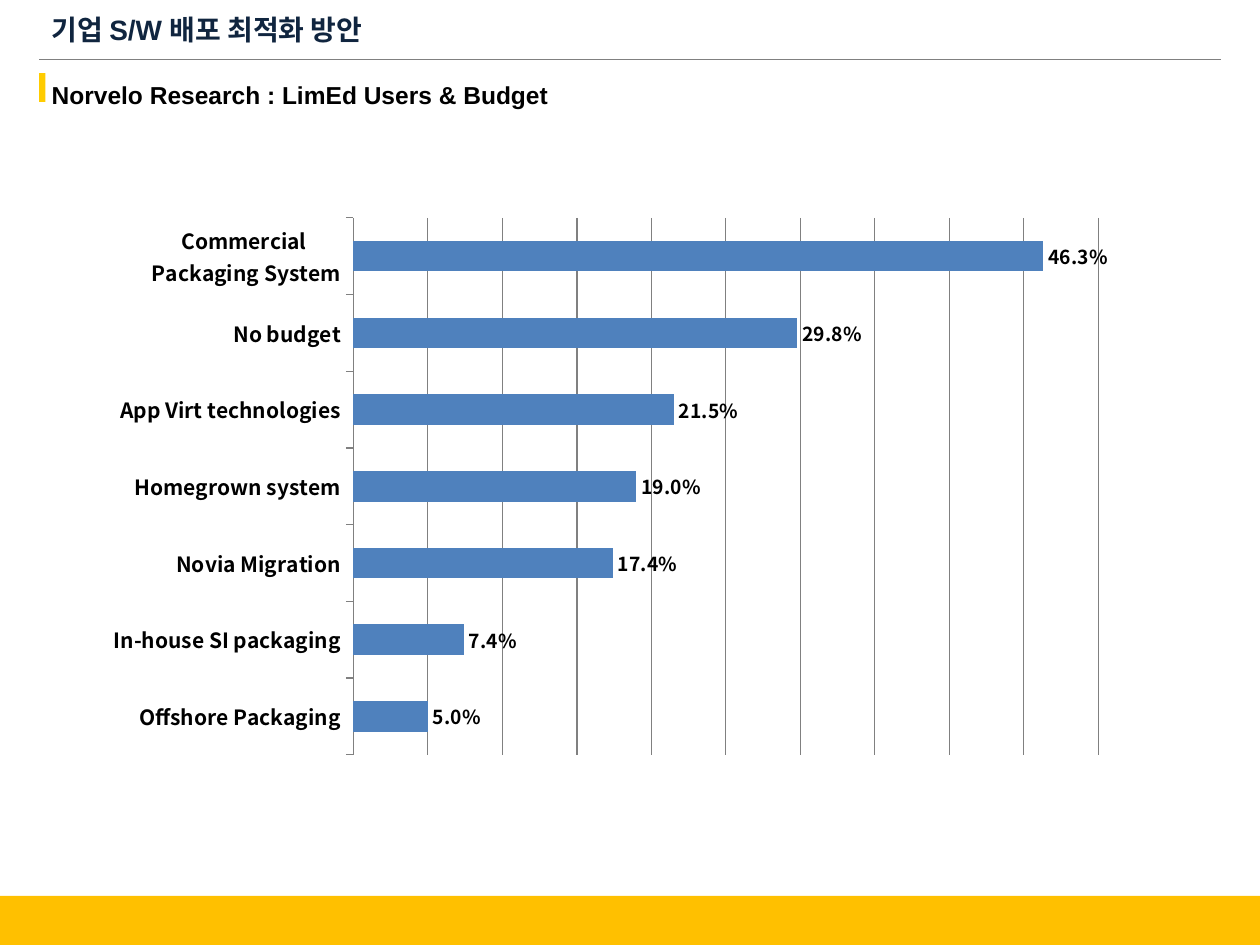
from dataclasses import dataclass

from lxml import etree
from pptx import Presentation
from pptx import util as u
from pptx.chart.data import CategoryChartData
from pptx.dml.color import RGBColor
from pptx.enum import chart as ch
from pptx.enum import shapes, text
from pptx.oxml import parse_xml
from pptx.oxml.ns import nsdecls, qn


@dataclass(frozen=True)
class Theme:
    font: str = "Arial"
    chart_font: str = "Noto Sans CJK KR"
    title_color: str = "10253F"
    text_color: str = "000000"
    rule_color: str = "808080"
    footer_color: str = "FFC000"
    accent_color: str = "FFCC00"
    bar_color: str = "4F81BD"
    title_size: int = 16
    body_size: int = 14
    category_size: int = 12
    label_size: int = 11


@dataclass(frozen=True)
class Band:
    left: float
    top: float
    width: float
    height: float
    color: str


THEME = Theme()
BANDS = [
    Band(0, 7.11, 10, 0.39, THEME.footer_color),
    Band(0.31, 0.58, 0.05, 0.23, THEME.accent_color),
]
BUDGET_SHARES = {
    "Offshore Packaging": 0.05,
    "In-house SI packaging": 0.074,
    "Novia Migration": 0.174,
    "Homegrown system": 0.19,
    "App Virt technologies": 0.215,
    "No budget": 0.298,
    "Commercial \nPackaging System": 0.463,
}


def style_font(font, size: int, color: str, name: str) -> None:
    font.size = u.Pt(size)
    font.bold = True
    font.name = name
    font.color.rgb = RGBColor.from_string(color)


def place(shape, left: float, top: float, width: float, height: float) -> None:
    shape.left, shape.top = u.Inches(left), u.Inches(top)
    shape.width, shape.height = u.Inches(width), u.Inches(height)


def draw_band(slide, band: Band) -> None:
    shape = slide.shapes.add_shape(
        shapes.MSO_SHAPE.RECTANGLE, u.Inches(band.left), u.Inches(band.top),
        u.Inches(band.width), u.Inches(band.height))
    shape.shadow.inherit = False
    shape.fill.solid()
    shape.fill.fore_color.rgb = RGBColor.from_string(band.color)
    shape.line.fill.background()


def draw_rule(slide) -> None:
    rule = slide.shapes.add_connector(
        shapes.MSO_CONNECTOR.STRAIGHT, u.Inches(0.31), u.Inches(0.47),
        u.Inches(9.69), u.Inches(0.47))
    rule.line.color.rgb = RGBColor.from_string(THEME.rule_color)
    rule.line.width = u.Pt(0.75)
    etree.SubElement(rule._element.spPr, qn("a:effectLst"))


def write_title(slide) -> None:
    title = slide.shapes.title
    place(title, 0.31, 0.08, 8.48, 0.31)
    title.text_frame.vertical_anchor = text.MSO_ANCHOR.MIDDLE
    title.text_frame.text = "기업 S/W 배포 최적화 방안"
    paragraph = title.text_frame.paragraphs[0]
    paragraph.alignment = text.PP_ALIGN.LEFT
    style_font(paragraph.font, THEME.title_size, THEME.title_color, THEME.font)


def write_body(slide) -> None:
    body = slide.placeholders[1]
    place(body, 0.31, 0.47, 9.38, 6.58)
    body.text_frame.text = "Norvelo Research : LimEd Users & Budget"
    paragraph = body.text_frame.paragraphs[0]
    paragraph.line_spacing = 1.5
    paragraph.space_before = u.Pt(0)
    properties = paragraph._p.get_or_add_pPr()
    properties.set("marL", str(u.Inches(0.5)))
    properties.set("indent", str(u.Inches(-0.5)))
    etree.SubElement(properties, qn("a:buNone"))
    style_font(paragraph.font, THEME.body_size, THEME.text_color, THEME.font)


def fix_plot_area(chart, x: float, y: float, width: float, height: float) -> None:
    """Set the inner plot area as fractions of the chart's size."""
    plot_area = chart._chartSpace.chart.plotArea
    for layout in plot_area.findall(qn("c:layout")):
        plot_area.remove(layout)
    plot_area.insert(0, parse_xml(
        f'<c:layout {nsdecls("c")}><c:manualLayout><c:layoutTarget val="inner"/>'
        '<c:xMode val="edge"/><c:yMode val="edge"/>'
        f'<c:x val="{x}"/><c:y val="{y}"/><c:w val="{width}"/><c:h val="{height}"/>'
        '</c:manualLayout></c:layout>'))


def draw_chart(slide) -> None:
    data = CategoryChartData(number_format="0.0%")
    data.categories = list(BUDGET_SHARES)
    data.add_series("Series 1", list(BUDGET_SHARES.values()))
    chart = slide.shapes.add_chart(
        ch.XL_CHART_TYPE.BAR_CLUSTERED, u.Inches(0.78), u.Inches(1.64),
        u.Inches(8.1), u.Inches(4.44), data).chart
    chart.has_legend = False
    chart.has_title = False
    chart.font.size = u.Pt(18)
    chart.font.name = THEME.chart_font
    fix_plot_area(chart, 0.25, 0.02, 0.73, 0.96)

    rule_color = RGBColor.from_string(THEME.rule_color)
    categories = chart.category_axis
    categories.major_tick_mark = ch.XL_TICK_MARK.OUTSIDE
    categories.format.line.color.rgb = rule_color
    style_font(categories.tick_labels.font, THEME.category_size,
               THEME.text_color, THEME.chart_font)

    values = chart.value_axis
    values.minimum_scale, values.maximum_scale = 0, 0.5
    values.major_unit = 0.05
    values.has_major_gridlines = True
    values.major_gridlines.format.line.color.rgb = rule_color
    values.tick_labels.number_format = "0.0%"
    values.tick_labels.number_format_is_linked = False
    values.visible = False

    plot = chart.plots[0]
    plot.vary_by_categories = False
    plot.gap_width = 150
    fill = plot.series[0].format.fill
    fill.solid()
    fill.fore_color.rgb = RGBColor.from_string(THEME.bar_color)
    labels = plot.series[0].data_labels
    labels.show_value = True
    labels.number_format = "0.0%"
    labels.number_format_is_linked = False
    labels.position = ch.XL_LABEL_POSITION.OUTSIDE_END
    style_font(labels.font, THEME.label_size, THEME.text_color, THEME.chart_font)


def main() -> None:
    presentation = Presentation()
    presentation.slide_width = u.Inches(10)
    presentation.slide_height = u.Inches(7.5)
    slide = presentation.slides.add_slide(presentation.slide_layouts[1])
    for band in BANDS:
        draw_band(slide, band)
    draw_rule(slide)
    write_title(slide)
    write_body(slide)
    draw_chart(slide)
    presentation.save("out.pptx")


if __name__ == "__main__":
    main()
